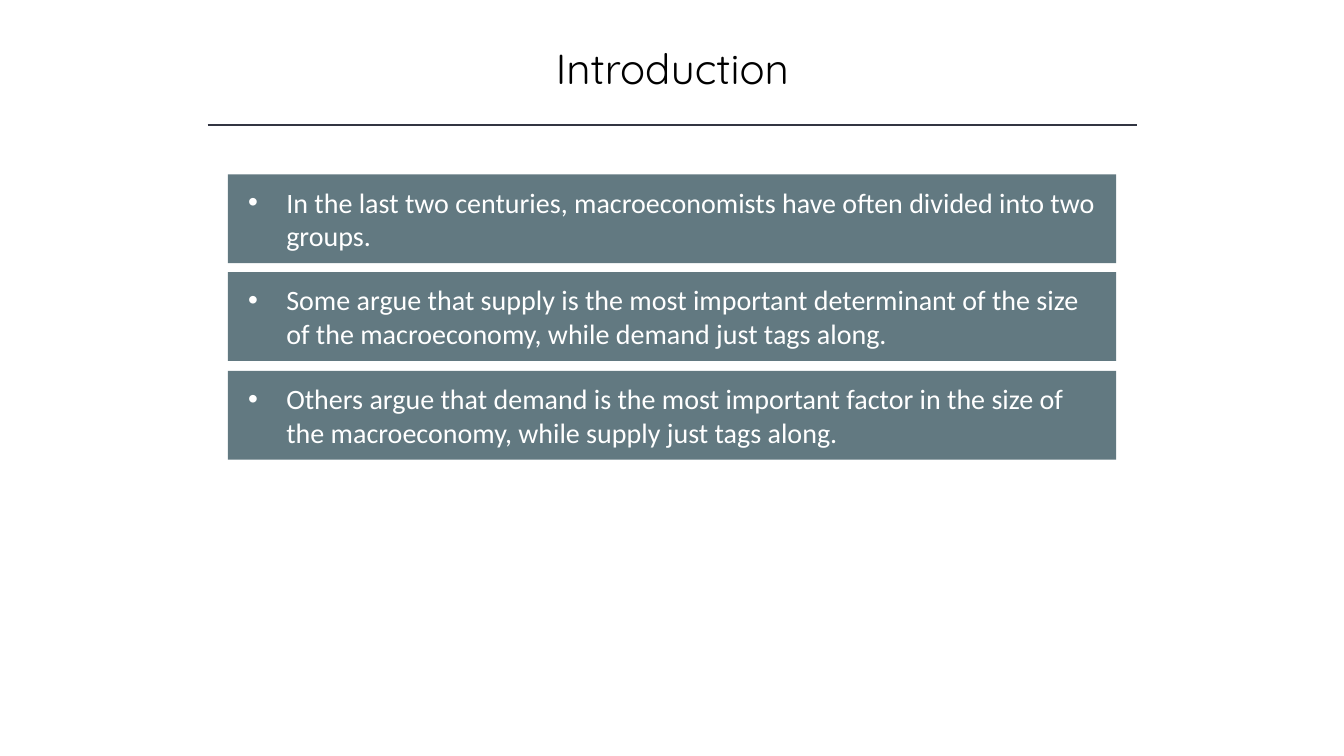
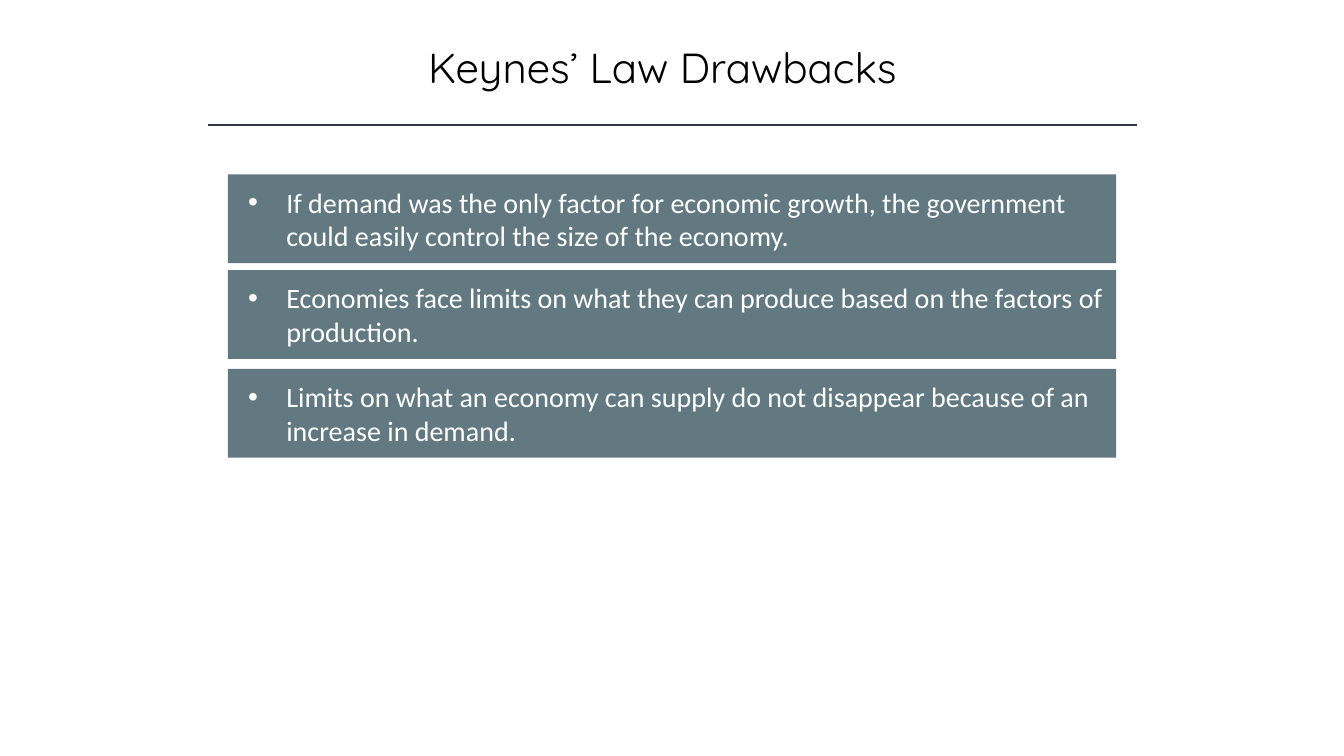
from lxml import etree
from pptx import Presentation
from pptx.dml.color import RGBColor
from pptx.enum.shapes import MSO_CONNECTOR, MSO_SHAPE
from pptx.enum.text import MSO_ANCHOR, PP_ALIGN
from pptx.oxml.ns import qn
from pptx.util import Pt

PX = 9144
SLATE, RULE, WHITE, BLACK = "627981", "323542", "FFFFFF", "000000"
CARD_LEFT, CARD_WIDTH, CARD_HEIGHT = 226, 881, 88
BULLET_INDENT = 38

SLIDES = [
    {
        "title": "Introduction",
        "title_at": (172, 37),
        "cards": [
            (173, "In the last two centuries, macroeconomists have often divided into two groups."),
            (270, "Some argue that supply is the most important determinant of the size of the "
                  "macroeconomy, while demand just tags along."),
            (368, "Others argue that demand is the most important factor in the size of the "
                  "macroeconomy, while supply just tags along."),
        ],
    },
    {
        "title": "Keynes’ Law Drawbacks",
        "title_at": (162, 36),
        "cards": [
            (173, "If demand was the only factor for economic growth, the government could easily "
                  "control the size of the economy."),
            (268, "Economies face limits on what they can produce based on the factors of production."),
            (366, "Limits on what an economy can supply do not disappear because of an increase in demand."),
        ],
    },
]


def px(*lengths):
    """Turn whole pixels into a list of EMU lengths."""
    return [length * PX for length in lengths]


def paint(color_format, color):
    """Set a colour format from a hex string."""
    color_format.rgb = RGBColor.from_string(color)


def write(shape, text, *, font, size, color, align, anchor, insets, bullet=False):
    """Put one formatted paragraph into a shape."""
    frame = shape.text_frame
    frame.word_wrap = True
    frame.vertical_anchor = anchor
    (frame.margin_left, frame.margin_top,
     frame.margin_right, frame.margin_bottom) = px(*insets)
    para = frame.paragraphs[0]
    para.alignment = align
    if bullet:
        add_bullet(para, color)
    span = para.add_run()
    span.text = text
    span.font.name = font
    span.font.size = Pt(size)
    paint(span.font.color, color)


def add_bullet(para, color):
    """Give a paragraph a round bullet with a hanging indent."""
    properties = para._p.get_or_add_pPr()
    properties.set("marL", str(BULLET_INDENT * PX))
    properties.set("indent", str(-BULLET_INDENT * PX))
    bullet_color = etree.SubElement(properties, qn("a:buClr"))
    etree.SubElement(bullet_color, qn("a:srgbClr"), val=color)
    etree.SubElement(properties, qn("a:buFont"), typeface="Arial")
    etree.SubElement(properties, qn("a:buChar"), char="•")


def add_title(page, text, left, top):
    """Add the centred slide title."""
    box = page.shapes.add_textbox(*px(left, top, 990, 61))
    write(box, text, font="Quicksand", size=30, color=BLACK, align=PP_ALIGN.CENTER,
          anchor=MSO_ANCHOR.TOP, insets=(5, 5, 5, 5))


def add_rule(page):
    """Add the thin line below the title."""
    rule = page.shapes.add_connector(MSO_CONNECTOR.STRAIGHT, *px(206, 124, 1128, 124))
    paint(rule.line.color, RULE)
    rule.line.width = Pt(1)
    etree.SubElement(rule._element.spPr, qn("a:effectLst"))


def add_card(page, top, text):
    """Add a slate card holding one bullet point."""
    card = page.shapes.add_shape(MSO_SHAPE.RECTANGLE,
                                 *px(CARD_LEFT, top, CARD_WIDTH, CARD_HEIGHT))
    card.shadow.inherit = False
    card.fill.solid()
    paint(card.fill.fore_color, SLATE)
    card.line.fill.background()
    write(card, text, font="Calibri", size=20, color=WHITE, align=PP_ALIGN.LEFT,
          anchor=MSO_ANCHOR.MIDDLE, insets=(20, 5, 10, 5), bullet=True)


def main():
    """Build the deck and save it."""
    deck = Presentation()
    deck.slide_width, deck.slide_height = px(1333, 750)
    for content in SLIDES:
        page = deck.slides.add_slide(deck.slide_layouts[6])
        add_title(page, content["title"], *content["title_at"])
        add_rule(page)
        for top, text in content["cards"]:
            add_card(page, top, text)
    deck.save("out.pptx")


if __name__ == "__main__":
    main()
